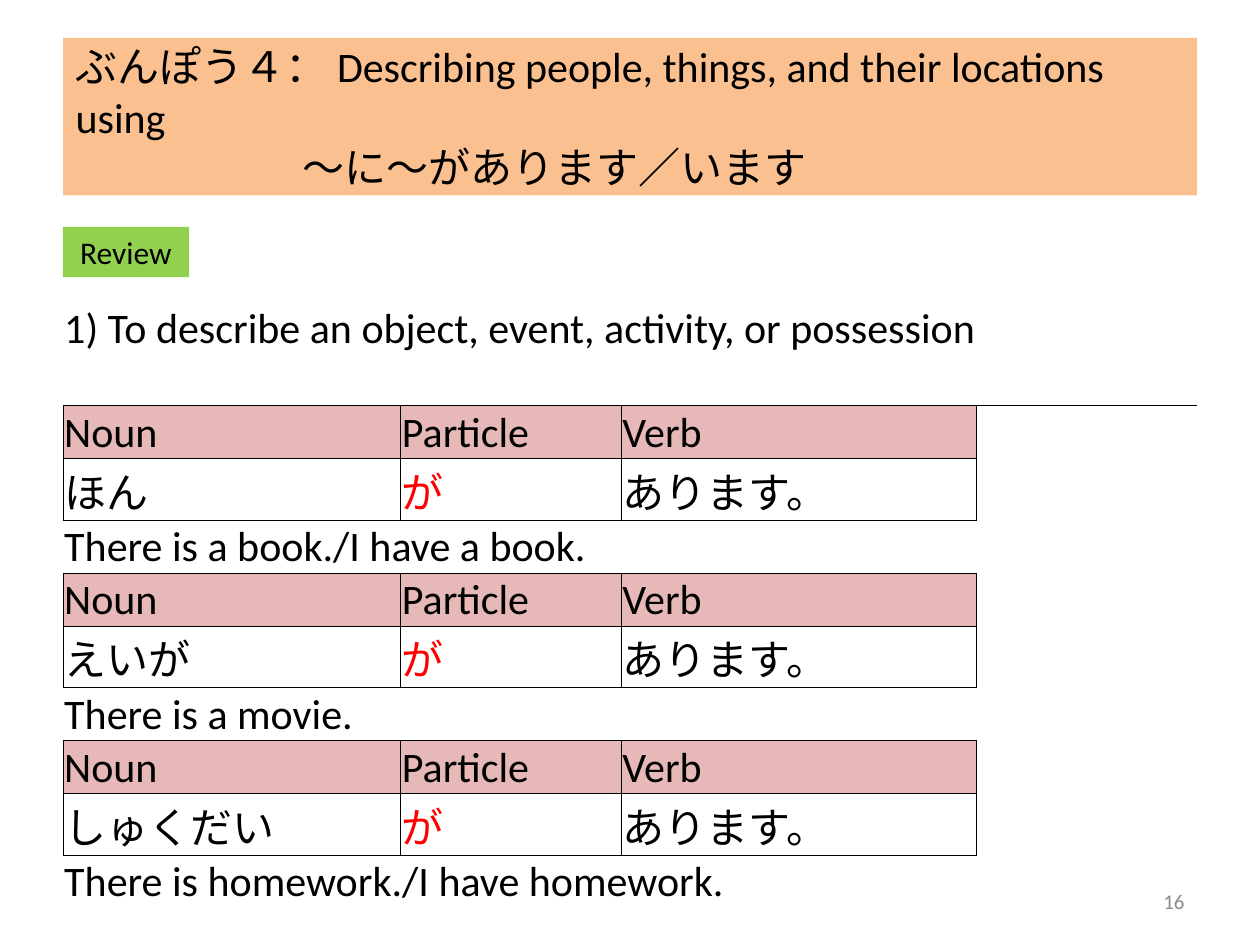
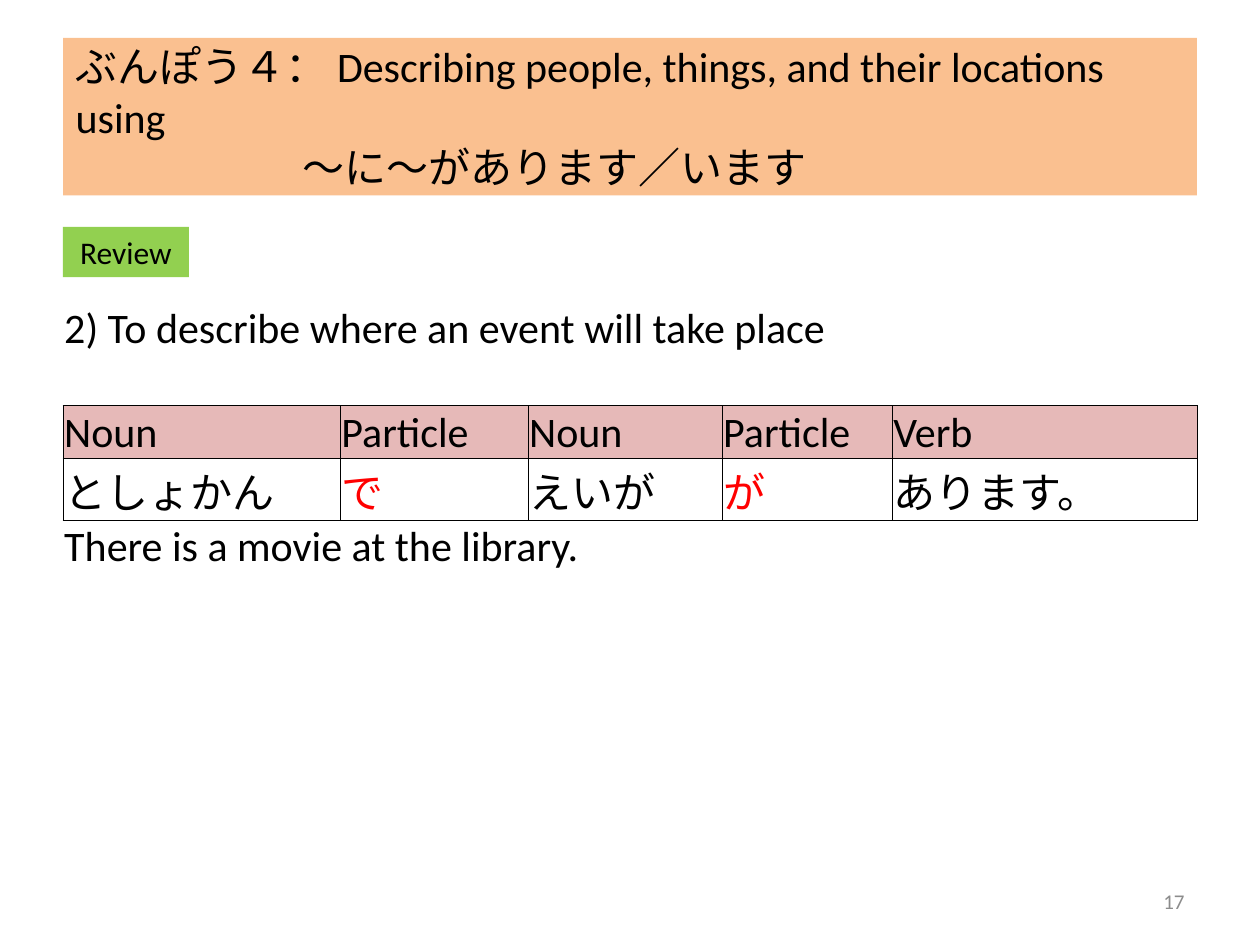
from pptx import Presentation, util as u
from pptx.dml.color import RGBColor
from pptx.enum import shapes, text
from pptx.oxml import parse_xml
from pptx.oxml.ns import nsdecls
from dataclasses import dataclass

# ---- Content ----
TITLE = ("ぶんぽう４： Describing people, things, and their locations using",
         "～に～があります／います")
TAG = "Review"
ARU = "あります。"
NOUN_HEADS = ["Noun", "Particle", "Verb"]
PLACE_HEADS = ["Noun", "Particle", "Noun", "Particle", "Verb"]

# Each example: heads, sentence, translation, columns the translation spans
SLIDES = [
    dict(page="16", point="1) To describe an object, event, activity, or possession",
         cols=[2.68, 1.75, 2.82, 1.75],
         examples=[
             (NOUN_HEADS, ["ほん", "が", ARU], "There is a book./I have a book.", 3),
             (NOUN_HEADS, ["えいが", "が", ARU], "There is a movie.", 2),
             (NOUN_HEADS, ["しゅくだい", "が", ARU], "There is homework./I have homework.", 3),
         ]),
    dict(page="17", point="2) To describe where an event will take place",
         cols=[2.2, 1.49, 1.54, 1.35, 2.42],
         examples=[
             (PLACE_HEADS, ["としょかん", "で", "えいが", "が", ARU],
              "There is a movie at the library.", 3),
         ]),
]


# ---- Theme and grid ----
@dataclass(frozen=True)
class Theme:
    font: str = "Calibri"
    ink: str = "000000"
    particle: str = "FF0000"
    page: str = "8C8C8C"
    band: str = "FAC090"
    tag: str = "92D050"
    head: str = "E6B9B8"
    body_pt: int = 24
    tag_pt: int = 18
    page_pt: int = 12
    rule_pt: float = 0.5


T = Theme()
W, H = 10, 7.5
MARGIN = W * 0.05
INNER = W - 2 * MARGIN
POINT_ROW = 1.22
EXAMPLE_ROWS = [0.42, 0.49, 0.42]   # heads, sentence, translation
NO_STYLE = "{2D5ABB26-0587-4C30-8999-92F81FD0307C}"


def box(*inches):
    return [u.Inches(v) for v in inches]


def add_run(p, words, size=T.body_pt, color=T.ink):
    r = p.add_run()
    r.text = words
    r.font.name, r.font.size = T.font, u.Pt(size)
    r.font.color.rgb = RGBColor.from_string(color)


def paint(target, color):
    target.fill.solid()
    target.fill.fore_color.rgb = RGBColor.from_string(color)


# ---- Shared parts ----
def add_title(s):
    sp = s.shapes.title
    sp.left, sp.top, sp.width, sp.height = box(MARGIN, 0.3, INNER, 1.25)
    paint(sp, T.band)
    tf = sp.text_frame
    tf.auto_size = text.MSO_AUTO_SIZE.NONE
    tf.vertical_anchor = text.MSO_ANCHOR.MIDDLE
    for p, words in zip((tf.paragraphs[0], tf.add_paragraph()), TITLE):
        p.alignment = text.PP_ALIGN.LEFT
        add_run(p, words)
    p._p.get_or_add_pPr().set("marL", str(u.Inches(1.8)))


def add_tag(s):
    sp = s.shapes.add_shape(shapes.MSO_SHAPE.RECTANGLE, *box(MARGIN, 1.8, 1, 0.4))
    sp.shadow.inherit = False
    paint(sp, T.tag)
    sp.line.fill.background()
    p = sp.text_frame.paragraphs[0]
    p.alignment = text.PP_ALIGN.CENTER
    add_run(p, TAG, T.tag_pt)


def add_page(s, number):
    width = 2.33
    tf = s.shapes.add_textbox(*box(W - MARGIN - width, 6.95, width, 0.4)).text_frame
    tf.word_wrap = True
    tf.vertical_anchor = text.MSO_ANCHOR.MIDDLE
    p = tf.paragraphs[0]
    p.alignment = text.PP_ALIGN.RIGHT
    add_run(p, number, T.page_pt, T.page)


# ---- Sentence table ----
def add_borders(cell):
    tcPr = cell._tc.get_or_add_tcPr()
    for i, side in enumerate("LRTB"):
        tcPr.insert(i, parse_xml(
            f'<a:ln{side} {nsdecls("a")} w="{u.Pt(T.rule_pt)}"><a:solidFill>'
            f'<a:srgbClr val="{T.ink}"/></a:solidFill></a:ln{side}>'))


def write(cell, words, color=T.ink, anchor=text.MSO_ANCHOR.BOTTOM):
    cell.vertical_anchor = anchor
    add_run(cell.text_frame.paragraphs[0], words, color=color)


def add_sentences(s, point, cols, examples):
    heights = [POINT_ROW] + EXAMPLE_ROWS * len(examples)
    frame = s.shapes.add_table(len(heights), len(cols),
                               *box(MARGIN, 2, INNER, sum(heights)))
    tbl = frame.table
    tbl.first_row = tbl.horz_banding = False
    tbl._tbl.tblPr[0].text = NO_STYLE
    for col, width in zip(tbl.columns, cols):
        col.width = u.Inches(width)
    for row, height in zip(tbl.rows, heights):
        row.height = u.Inches(height)
    for cell in tbl.iter_cells():
        cell.margin_left = cell.margin_right = cell.margin_top = u.Inches(0.01)
        cell.margin_bottom = 0
        cell.text_frame.paragraphs[0].font.size = u.Pt(T.body_pt)
        cell.fill.background()

    # Grammar point above the examples
    tbl.cell(0, 0).merge(tbl.cell(0, len(cols) - 1))
    write(tbl.cell(0, 0), point, anchor=text.MSO_ANCHOR.MIDDLE)

    for i, (heads, words, meaning, span) in enumerate(examples):
        top = 1 + i * len(EXAMPLE_ROWS)
        for c, (head, word) in enumerate(zip(heads, words)):
            head_cell, word_cell = tbl.cell(top, c), tbl.cell(top + 1, c)
            paint(head_cell, T.head)
            write(head_cell, head)
            write(word_cell, word, T.particle if head == "Particle" else T.ink)
            add_borders(head_cell)
            add_borders(word_cell)
        tbl.cell(top + 2, 0).merge(tbl.cell(top + 2, span - 1))
        write(tbl.cell(top + 2, 0), meaning)


def main():
    prs = Presentation()
    prs.slide_width, prs.slide_height = box(W, H)
    for slide in SLIDES:
        s = prs.slides.add_slide(prs.slide_layouts.get_by_name("Title Only"))
        add_title(s)
        add_page(s, slide["page"])
        add_sentences(s, slide["point"], slide["cols"], slide["examples"])
        add_tag(s)
    prs.save("out.pptx")


if __name__ == "__main__":
    main()
